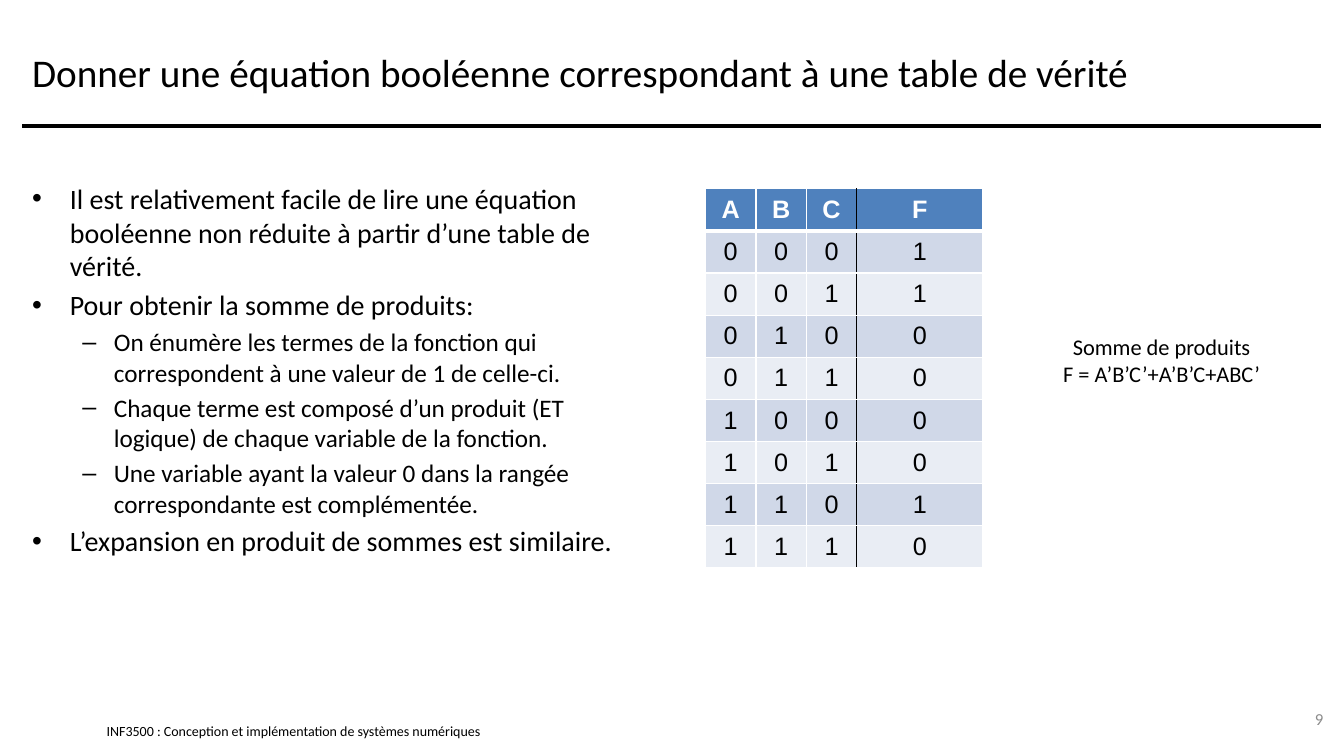
from dataclasses import dataclass
from itertools import product

from lxml.etree import SubElement
from pptx import Presentation
from pptx.dml.color import RGBColor
from pptx.enum.shapes import MSO_CONNECTOR
from pptx.enum.text import MSO_ANCHOR as Anchor, PP_ALIGN as Align
from pptx.oxml.ns import qn
from pptx.util import Cm, Pt


@dataclass(frozen=True)
class Theme:
    black: str = "000000"
    white: str = "FFFFFF"
    grey: str = "8C8C8C"
    header: str = "4F81BD"
    bands: tuple = ("D0D8E8", "E9EDF4")
    body_font: str = "Calibri"
    table_font: str = "Arial"
    title_size: int = 28
    body_sizes: tuple = (20, 18)
    table_size: int = 18
    equation_size: int = 16
    number_size: int = 12
    footer_size: int = 10
    bullets: tuple = (("•", 0.95, 0.95), ("–", 2.06, 0.79))  # sign, left, hanging (cm)


def write(para, text, font, size, color, bold=False, align=Align.LEFT):
    para.alignment = align
    span = para.add_run()
    span.text = text
    span.font.name = font
    span.font.size = Pt(size)
    span.font.bold = bold
    span.font.color.rgb = RGBColor.from_string(color)


class SlideBuilder:
    def __init__(self, slide, theme):
        self.shapes = slide.shapes
        self.theme = theme

    def frame(self, left, top, width, height, anchor=Anchor.TOP, inset=True):
        box = self.shapes.add_textbox(Cm(left), Cm(top), Cm(width), Cm(height))
        frame = box.text_frame
        frame.word_wrap = True
        frame.vertical_anchor = anchor
        if not inset:
            frame.margin_left = frame.margin_right = 0
            frame.margin_top = frame.margin_bottom = 0
        return frame

    def text(self, lines, place, size, color=None, align=Align.LEFT, **options):
        frame = self.frame(*place, **options)
        for index, line in enumerate(lines):
            para = frame.add_paragraph() if index else frame.paragraphs[0]
            write(para, line, self.theme.body_font, size,
                  color or self.theme.black, align=align)

    def bullet_list(self, items, place):
        """Write (level, text) pairs as a bulleted list."""
        frame = self.frame(*place)
        for index, (level, line) in enumerate(items):
            para = frame.add_paragraph() if index else frame.paragraphs[0]
            para.level = level
            sign, left, hanging = self.theme.bullets[level]
            size = self.theme.body_sizes[level]
            props = para._p.get_or_add_pPr()
            props.set("marL", str(Cm(left)))
            props.set("indent", str(-Cm(hanging)))
            SubElement(props, qn("a:buFont"), typeface="Arial")
            SubElement(props, qn("a:buChar"), char=sign)
            if index:
                para.space_before = Pt(size * 0.2)
            write(para, line, self.theme.body_font, size, self.theme.black)

    def rule(self, left, top, width, weight):
        line = self.shapes.add_connector(
            MSO_CONNECTOR.STRAIGHT, Cm(left), Cm(top), Cm(left + width), Cm(top))
        line.line.color.rgb = RGBColor.from_string(self.theme.black)
        line.line.width = Pt(weight)
        SubElement(line._element.spPr, qn("a:effectLst"))

    def border(self, cell, side, color, weight):
        props = cell._tc.get_or_add_tcPr()
        line = SubElement(props, qn(f"a:ln{side}"), w=str(Pt(weight)))
        fill = SubElement(line, qn("a:solidFill"))
        SubElement(fill, qn("a:srgbClr"), val=color)

    def truth_table(self, rows, left, top, widths, row_height):
        """Draw the rows with a black line between the inputs and the last column."""
        theme = self.theme
        table = self.shapes.add_table(
            len(rows), len(widths), Cm(left), Cm(top),
            Cm(sum(widths)), Cm(row_height * len(rows))).table
        table.first_row = table.horz_banding = False
        for column, width in zip(table.columns, widths):
            column.width = Cm(width)
        last = len(widths) - 1
        for r, values in enumerate(rows):
            table.rows[r].height = Cm(row_height)
            is_header = r == 0
            fill = theme.header if is_header else theme.bands[(r - 1) % 2]
            for c, value in enumerate(values):
                cell = table.cell(r, c)
                cell.vertical_anchor = Anchor.MIDDLE
                self.border(cell, "L", theme.black if c == last else theme.white, 1)
                self.border(cell, "R", theme.black if c == last - 1 else theme.white, 1)
                self.border(cell, "T", theme.white, 3 if r == 1 else 1)
                self.border(cell, "B", theme.white, 3 if is_header else 1)
                cell.fill.solid()
                cell.fill.fore_color.rgb = RGBColor.from_string(fill)
                write(cell.text_frame.paragraphs[0], str(value), theme.table_font,
                      theme.table_size, theme.white if is_header else theme.black,
                      bold=is_header, align=Align.CENTER)


def main():
    deck = Presentation()
    deck.slide_width, deck.slide_height = Cm(33.87), Cm(19.05)
    theme = Theme()
    page = SlideBuilder(deck.slides.add_slide(deck.slide_layouts[6]), theme)
    margin, full_width, rule_top = 0.56, 32.74, 3.18

    page.text(["INF3500 : Conception et implémentation de systèmes numériques"],
              (2.69, 18.21, 12.98, 0.43), theme.footer_size,
              anchor=Anchor.MIDDLE, inset=False)
    page.rule(margin, rule_top, full_width, 3)
    page.text(["Donner une équation booléenne correspondant à une table de vérité"],
              (margin, 0.43, full_width, 2.75), theme.title_size, anchor=Anchor.MIDDLE)
    page.bullet_list([
        (0, "Il est relativement facile de lire une équation booléenne non réduite "
            "à partir d’une table de vérité."),
        (0, "Pour obtenir la somme de produits:"),
        (1, "On énumère les termes de la fonction qui correspondent à une valeur "
            "de 1 de celle-ci."),
        (1, "Chaque terme est composé d’un produit (ET logique) de chaque variable "
            "de la fonction."),
        (1, "Une variable ayant la valeur 0 dans la rangée correspondante est "
            "complémentée."),
        (0, "L’expansion en produit de sommes est similaire."),
    ], (margin, 4.45, 16.08, 12.9))
    page.text(["9"], (31.9, 17.6, 1.7, 1.02), theme.number_size, theme.grey,
              Align.RIGHT, anchor=Anchor.MIDDLE)

    true_inputs = {(0, 0, 0), (0, 0, 1), (1, 1, 0)}
    rows = [("A", "B", "C", "F")]
    rows += [(*inputs, int(inputs in true_inputs)) for inputs in product((0, 1), repeat=3)]
    page.truth_table(rows, 17.78, 4.76, (1.27, 1.27, 1.27, 3.18), 1.06)
    page.text(["Somme de produits", "F = A’B’C’+A’B’C+ABC’"],
              (25.81, 8.28, 6.93, 1.63), theme.equation_size, align=Align.CENTER)

    deck.save("out.pptx")


if __name__ == "__main__":
    main()
